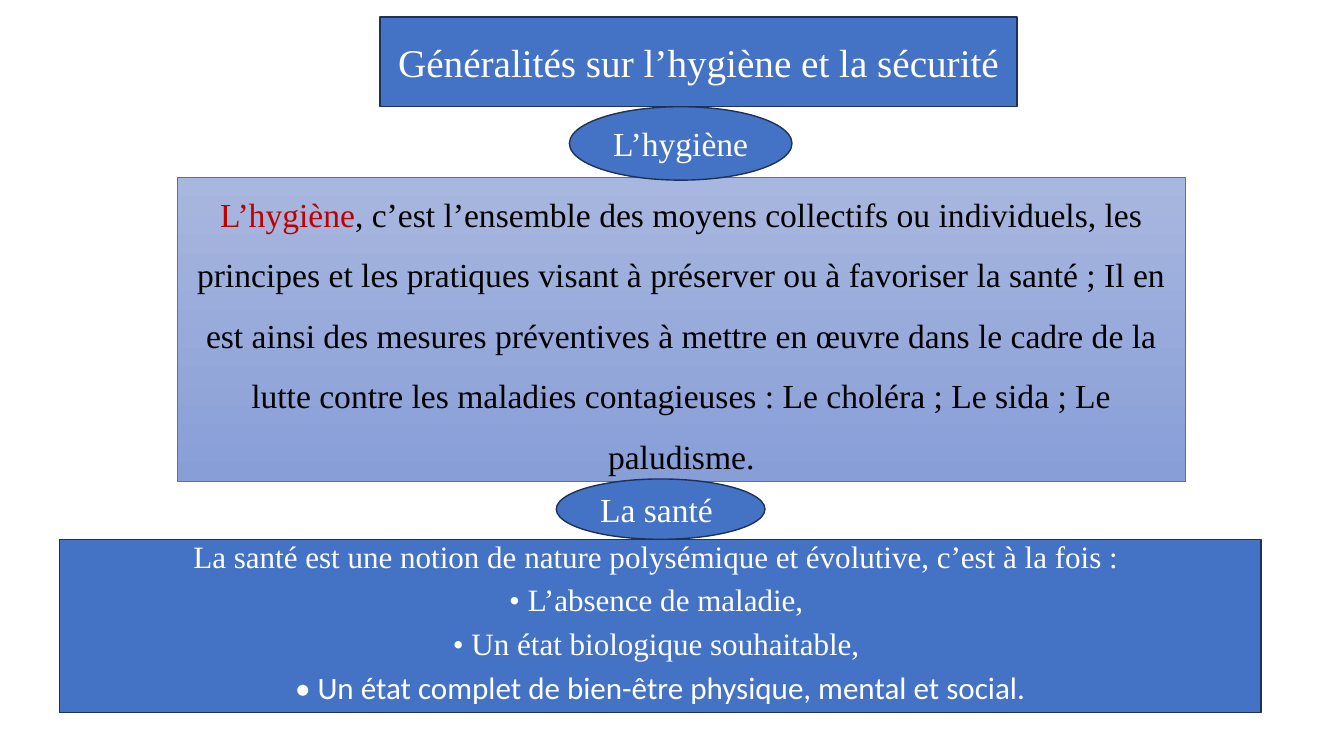
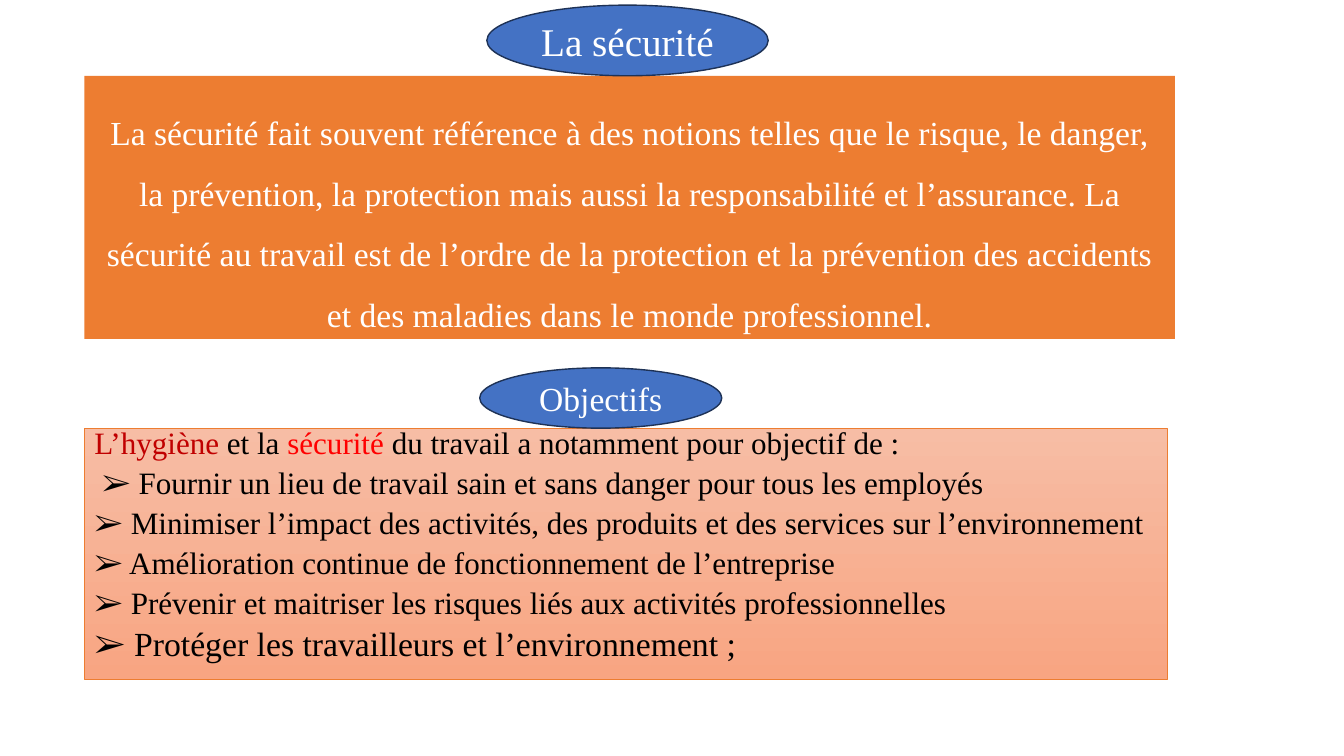
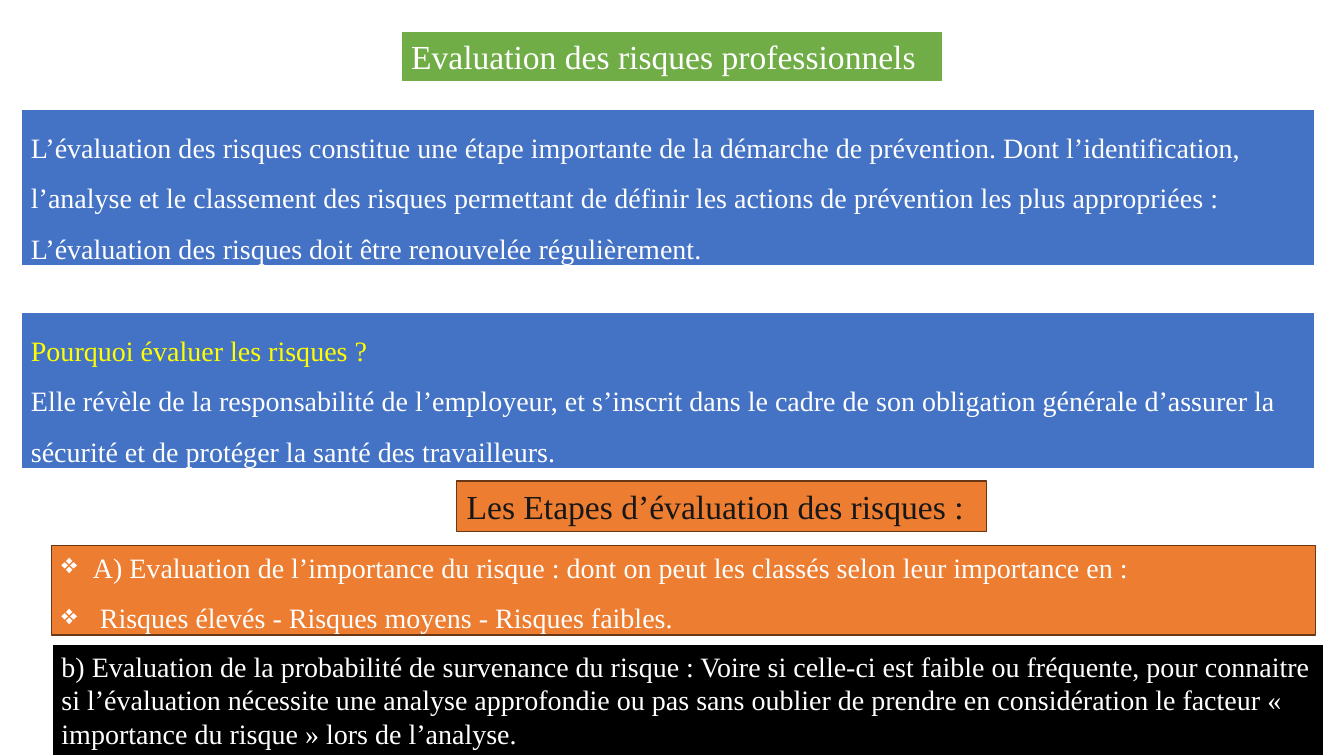
"""Build three slides on workplace hygiene, safety and risk assessment."""
import pptx
import pptx.dml.color
import pptx.enum.shapes
import pptx.enum.text
import pptx.oxml.ns
import pptx.util
from lxml import etree

Cm = pptx.util.Cm
Pt = pptx.util.Pt
RECT = pptx.enum.shapes.MSO_SHAPE.RECTANGLE
OVAL = pptx.enum.shapes.MSO_SHAPE.OVAL
ALIGN = pptx.enum.text.PP_ALIGN
ANCHOR = pptx.enum.text.MSO_ANCHOR

COLORS = {
    "blue": "4472C4", "navy": "1E3256", "orange": "ED7D31", "brown": "683715",
    "green": "70AD47", "white": "FFFFFF", "black": "000000", "ink": "181717",
    "crimson": "C00000", "red": "FF0000", "yellow": "FFFF00",
    "blue_light": "A8B7DF", "blue_mid": "889ED7",
    "peach_light": "F7BDA5", "peach_mid": "F8A582",
}


def rgb(name):
    return pptx.dml.color.RGBColor.from_string(COLORS[name])


def panel(slide, at, fill="blue", line="navy", width=1, kind=RECT, anchor=ANCHOR.MIDDLE):
    shape = slide.shapes.add_shape(kind, *[Cm(length) for length in at])
    shape.shadow.inherit = False
    if isinstance(fill, tuple):
        shape.fill.gradient()
        shape.fill.gradient_angle = 270
        for stop, name in zip(shape.fill.gradient_stops, fill):
            stop.color.rgb = rgb(name)
    else:
        shape.fill.solid()
        shape.fill.fore_color.rgb = rgb(fill)
    if line:
        shape.line.color.rgb = rgb(line)
        shape.line.width = Pt(width)
    else:
        shape.line.fill.background()
    shape.text_frame.word_wrap = True
    shape.text_frame.vertical_anchor = anchor
    return shape.text_frame


def write(frame, text, size=24, color="white", font="Times New Roman",
          align=ALIGN.CENTER, spacing=None, before=0, bullet=None):
    first = not frame.text
    paragraph = frame.paragraphs[0] if first else frame.add_paragraph()
    paragraph.alignment = align
    if spacing:
        paragraph.line_spacing = spacing
    if before and not first:
        paragraph.space_before = Pt(before)
    if bullet:
        properties = paragraph._p.get_or_add_pPr()
        properties.set("marL", str(Cm(0.79)))
        properties.set("indent", str(-Cm(0.79)))
        etree.SubElement(properties, pptx.oxml.ns.qn("a:buChar"), char=bullet)
    for words, shade in [(text, color)] if isinstance(text, str) else text:
        run = paragraph.add_run()
        run.text = words
        run.font.size = Pt(size)
        run.font.name = font
        run.font.color.rgb = rgb(shade)


deck = pptx.Presentation()
deck.slide_width = Cm(33.87)
deck.slide_height = Cm(19.05)
general, safety, risks = [deck.slides.add_slide(deck.slide_layouts[6]) for _ in range(3)]

hygiene = panel(general, (4.47, 4.47, 25.4, 7.65), ("blue_light", "blue_mid"), "blue", 0.5,
                anchor=ANCHOR.BOTTOM)
write(hygiene, [
    ("L’hygiène", "crimson"),
    (", c’est l’ensemble des moyens collectifs ou individuels, les principes et les pratiques "
     "visant à préserver ou à favoriser la santé ; Il en est ainsi des mesures préventives à "
     "mettre en œuvre dans le cadre de la lutte contre les maladies contagieuses : Le choléra ; "
     "Le sida ; Le paludisme.", "black"),
], spacing=1.5)

health = panel(general, (1.5, 13.59, 30.28, 4.37), anchor=ANCHOR.TOP)
for sentence, font in [
    ("La santé est une notion de nature polysémique et évolutive, c’est à la fois : ",
     "Times New Roman"),
    ("• L’absence de maladie, ", "Times New Roman"),
    ("• Un état biologique souhaitable, ", "Times New Roman"),
    ("• Un état complet de bien-être physique, mental et social.", "Calibri"),
]:
    write(health, sentence, size=22.2, font=font, spacing=0.8, before=10)

write(panel(general, (9.58, 0.43, 16.05, 2.26)), "Généralités sur l’hygiène et la sécurité", size=28)

definition = panel(safety, (2.13, 1.91, 27.48, 6.63), "orange", None, anchor=ANCHOR.BOTTOM)
write(definition,
      "La sécurité fait souvent référence à des notions telles que le risque, le danger, la "
      "prévention, la protection mais aussi la responsabilité et l’assurance. La sécurité au "
      "travail est de l’ordre de la protection et la prévention des accidents et des maladies "
      "dans le monde professionnel.", spacing=1.5)

goals = panel(safety, (2.13, 10.8, 27.28, 6.32), ("peach_light", "peach_mid"), "orange", 0.5,
              anchor=ANCHOR.TOP)
goals_intro = [("L’hygiène", "crimson"), (" et la ", "black"), ("sécurité", "red"),
               (" du travail a notamment pour objectif de :", "black")]
for sentence, size in [
    (goals_intro, 22.2),
    (" ➢ Fournir un lieu de travail sain et sans danger pour tous les employés ", 22.2),
    ("➢ Minimiser l’impact des activités, des produits et des services sur l’environnement ", 22.2),
    ("➢ Amélioration continue de fonctionnement de l’entreprise ", 22.2),
    ("➢ Prévenir et maitriser les risques liés aux activités professionnelles", 22.2),
    ("➢ Protéger les travailleurs et l’environnement ; ", 24.1),
]:
    write(goals, sentence, size=size, color="black", align=ALIGN.JUSTIFY, spacing=0.7, before=10)

for slide, at, topic, size in [
    (general, (14.35, 2.69, 5.61, 1.85), "L’hygiène ", 24),
    (general, (14.02, 12.07, 5.26, 1.52), "La santé ", 24),
    (safety, (12.27, 0.13, 7.09, 1.78), "La sécurité ", 28),
    (safety, (12.09, 9.27, 6.1, 1.52), "Objectifs", 24),
]:
    write(panel(slide, at, kind=OVAL), topic, size=size)

for at, fill, line, width, color, size, spacing, bullet, sentences in [
    ((10.11, 0.79, 13.67, 1.27), "green", "white", 1.5, "white", 24, None, None,
     ["Evaluation des risques professionnels"]),
    ((0.53, 2.74, 32.61, 3.96), "blue", "white", 1.5, "white", 20, 1.5, None,
     ["L’évaluation des risques constitue une étape importante de la démarche de prévention. "
      "Dont l’identification, l’analyse et le classement des risques permettant de définir les "
      "actions de prévention les plus appropriées : L’évaluation des risques doit être "
      "renouvelée régulièrement."]),
    ((0.53, 7.85, 32.61, 3.96), "blue", "white", 1.5, "white", 20, 1.5, None,
     [[("Pourquoi évaluer les risques ?", "yellow")],
      "Elle révèle de la responsabilité de l’employeur, et s’inscrit dans le cadre de son "
      "obligation générale d’assurer la sécurité et de protéger la santé des travailleurs."]),
    ((11.51, 12.12, 13.36, 1.27), "orange", "brown", 1, "ink", 24, None, None,
     ["Les Etapes d’évaluation des risques :"]),
    ((1.3, 13.74, 31.85, 2.26), "orange", "brown", 1, "white", 20, 1.5, "❖",
     ["A) Evaluation de l’importance du risque : dont on peut les classés selon leur "
      "importance en :",
      " Risques élevés - Risques moyens - Risques faibles."]),
    ((1.3, 16.23, 32.08, 2.82), "black", "white", 1.5, "white", 20, None, None,
     ["b) Evaluation de la probabilité de survenance du risque : Voire si celle-ci est faible ou "
      "fréquente, pour connaitre si l’évaluation nécessite une analyse approfondie ou pas sans "
      "oublier de prendre en considération le facteur « importance du risque » lors de "
      "l’analyse."]),
]:
    step = panel(risks, at, fill, line, width, anchor=ANCHOR.TOP)
    for sentence in sentences:
        first_bullet = bullet and sentence == sentences[0]
        write(step, sentence, size=size, color=color, align=ALIGN.LEFT,
              spacing=None if first_bullet else spacing, bullet=bullet)

deck.save("out.pptx")
